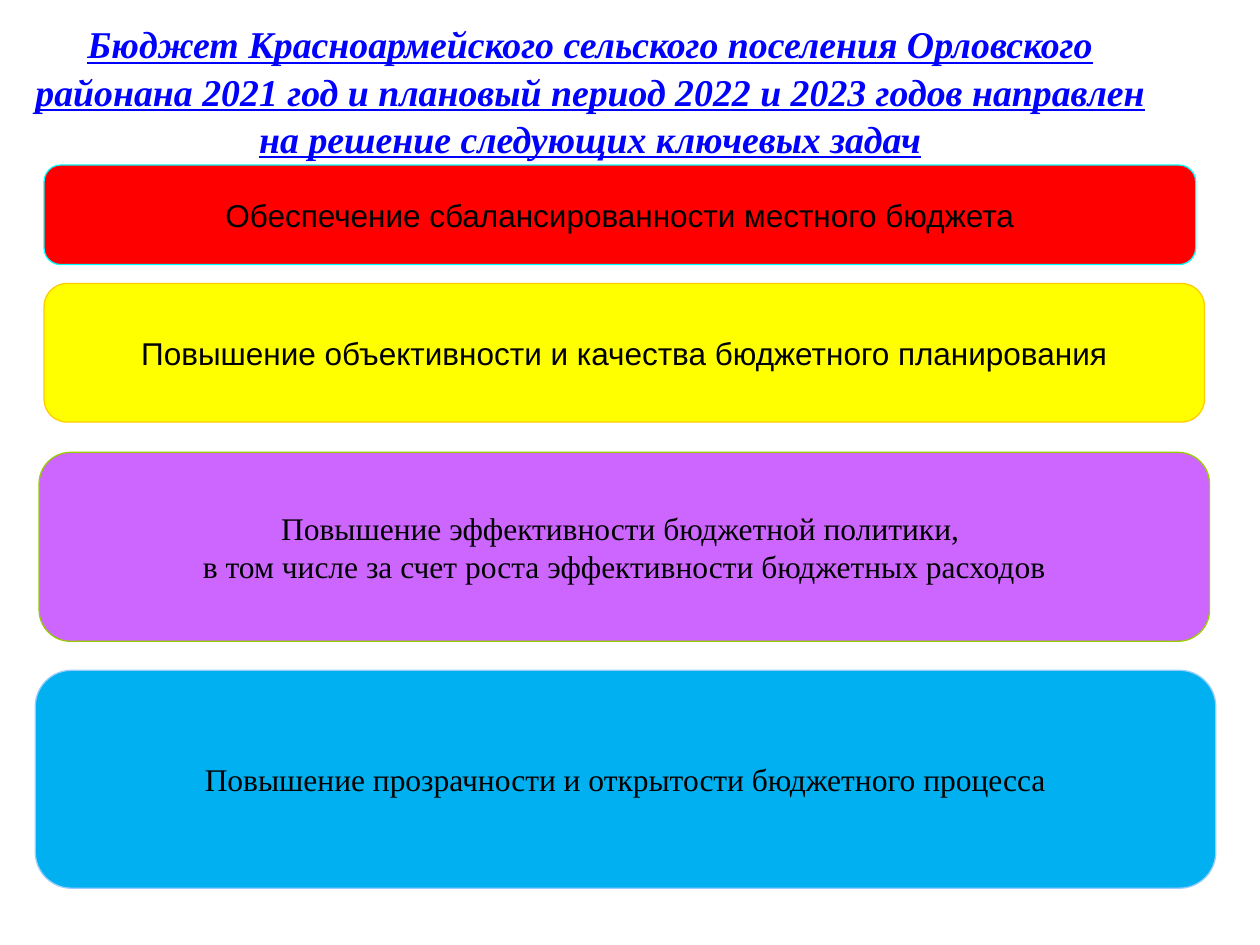
from pptx import Presentation
from pptx.dml.color import RGBColor
from pptx.enum import shapes, text
from pptx.util import Inches, Pt

COLORS = {
    "title": "0000FF", "text": "000000",
    "red": "FF0000", "cyan": "00FFFF",
    "yellow": "FFFF00", "gold": "FFCC00",
    "violet": "CC66FF", "green": "99CC00",
    "blue": "00B0F0", "pale_blue": "99CCFF",
}
SERIF, SANS = "Times New Roman", "Arial"

TITLE = ("Бюджет Красноармейского сельского поселения Орловского районана "
         "2021 год и плановый период 2022 и 2023 годов направлен на решение "
         "следующих ключевых задач")

# lines of text, (left, top, width, height), fill, outline, font
TASKS = [
    (["Обеспечение сбалансированности местного бюджета"],
     (0.35, 1.31, 9.14, 0.79), "red", "cyan", SANS),
    (["Повышение объективности и качества бюджетного планирования"],
     (0.35, 2.25, 9.21, 1.1), "yellow", "gold", SANS),
    (["Повышение эффективности бюджетной политики, ",
      "в том числе за счет роста эффективности бюджетных расходов"],
     (0.31, 3.59, 9.29, 1.5), "violet", "green", SERIF),
    (["Повышение прозрачности и открытости бюджетного процесса"],
     (0.28, 5.32, 9.37, 1.73), "blue", "pale_blue", SERIF),
]


def color(name):
    return RGBColor.from_string(COLORS[name])


def write_text(shape, lines, *, font=SERIF, size=18, fill="text",
               emphasis=False, wrap=True, spacing=1.0):
    """Write one centred paragraph per line; emphasis is bold, italic, underlined."""
    frame = shape.text_frame
    frame.auto_size = text.MSO_AUTO_SIZE.NONE
    frame.word_wrap = wrap
    frame.vertical_anchor = text.MSO_ANCHOR.MIDDLE
    frame.text = "\n".join(lines)
    for paragraph in frame.paragraphs:
        paragraph.alignment = text.PP_ALIGN.CENTER
        paragraph.line_spacing = spacing
        style = paragraph.runs[0].font
        style.name, style.size = font, Pt(size)
        style.bold = style.italic = style.underline = emphasis
        style.color.rgb = color(fill)


def add_title(slide):
    title = slide.shapes.title
    title.left, title.top = Inches(0), Inches(0.28)
    title.width, title.height = Inches(9.37), Inches(0.87)
    write_text(title, [TITLE], size=21.6, fill="title", emphasis=True,
               spacing=1.04)


def add_task(slide, lines, box, fill, outline, font):
    shape = slide.shapes.add_shape(shapes.MSO_SHAPE.ROUNDED_RECTANGLE,
                                   *map(Inches, box))
    shape.shadow.inherit = False
    shape.fill.solid()
    shape.fill.fore_color.rgb = color(fill)
    shape.line.color.rgb = color(outline)
    shape.line.width = Pt(0.75)
    write_text(shape, lines, font=font, wrap=False)


def main():
    presentation = Presentation()
    presentation.slide_width, presentation.slide_height = Inches(10), Inches(7.5)
    title_only = presentation.slide_layouts[5]
    slide = presentation.slides.add_slide(title_only)
    add_title(slide)
    for task in TASKS:
        add_task(slide, *task)
    presentation.save("out.pptx")


if __name__ == "__main__":
    main()
